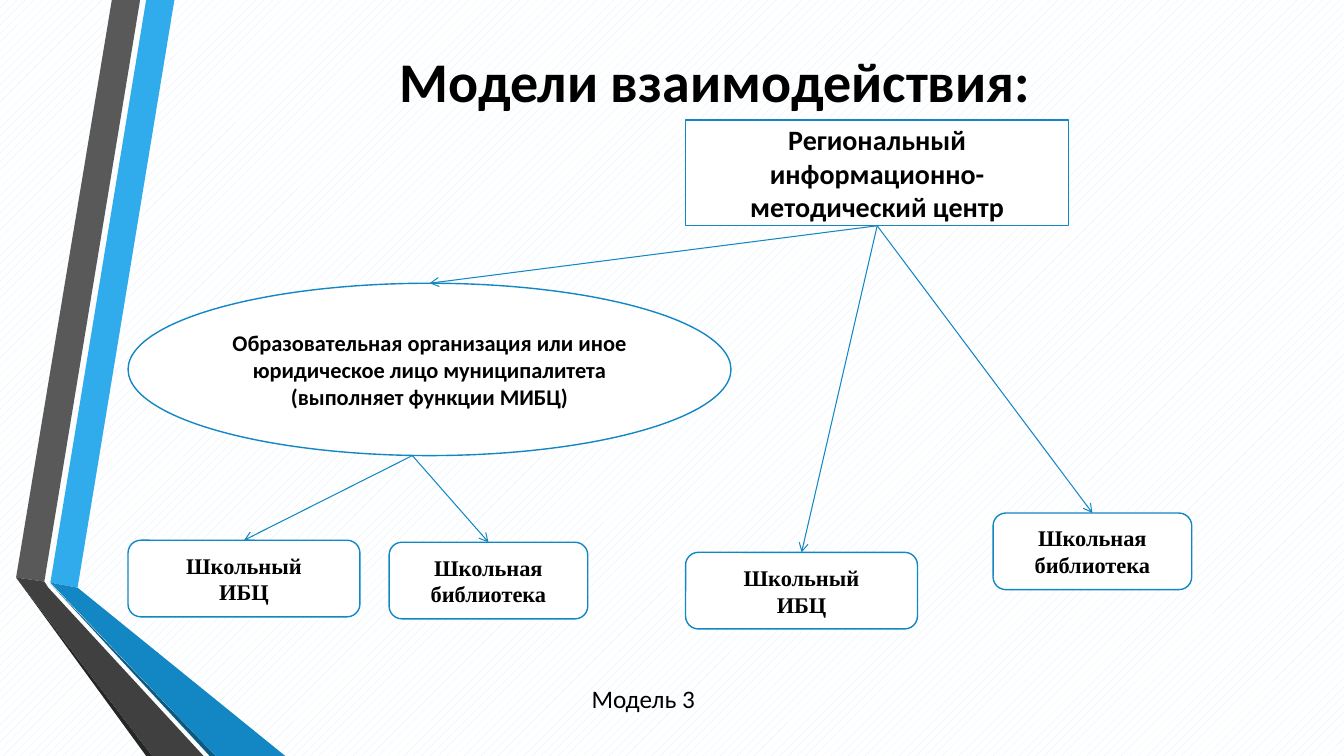
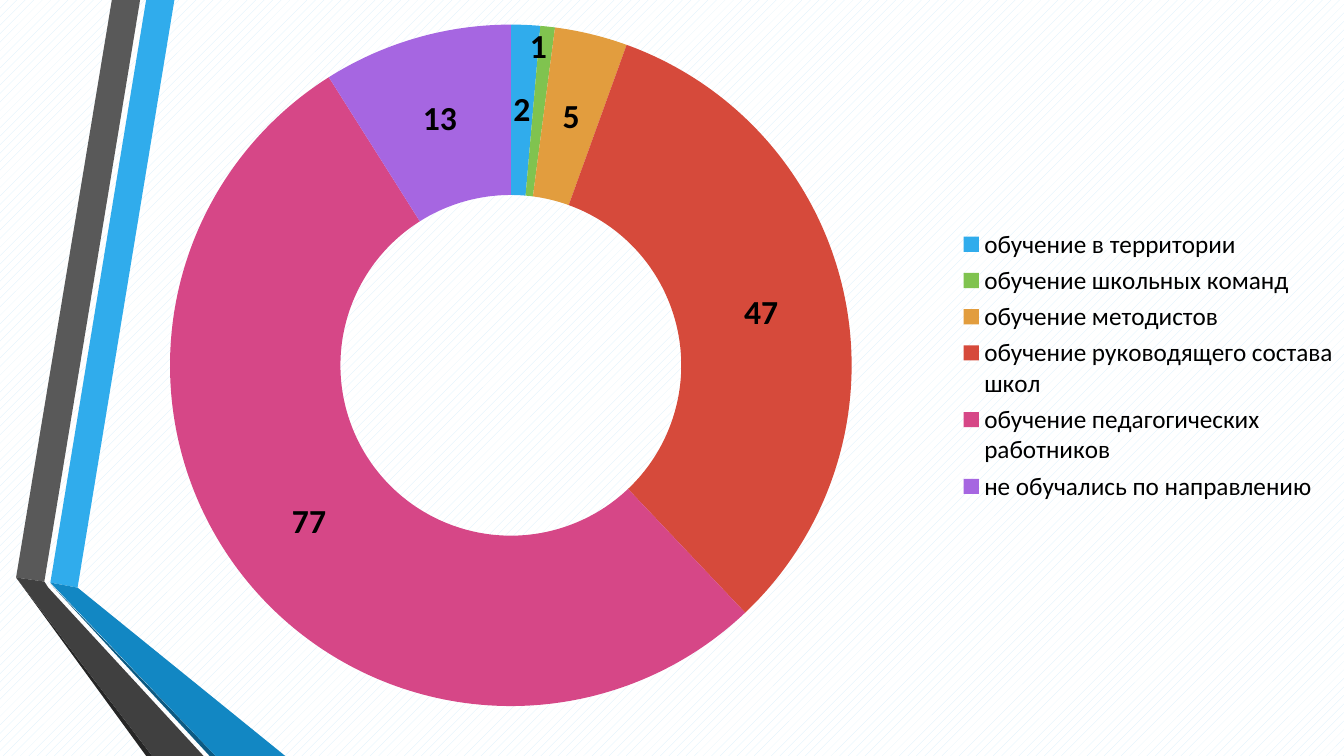
import dataclasses

import lxml.etree
import pptx
import pptx.chart.data
import pptx.dml.color
import pptx.enum.chart
import pptx.enum.dml
import pptx.enum.shapes
import pptx.enum.text
import pptx.oxml.ns
import pptx.util

Inches, Pt = pptx.util.Inches, pptx.util.Pt
SHAPE = pptx.enum.shapes.MSO_SHAPE
qn = pptx.oxml.ns.qn


def rgb(value):
    return pptx.dml.color.RGBColor.from_string(value)


@dataclasses.dataclass(frozen=True)
class Theme:
    text: str = "000000"
    paper: str = "FFFFFF"
    hatch: str = "D6EEFB"
    outline: str = "1287C3"
    slices: tuple = ("30ACEC", "80C34F", "E29D3E", "D64A3B", "D64787", "A666E1")
    font: str = "Calibri"
    serif: str = "Times New Roman"
    title_size: int = 40
    value_size: int = 24
    centre_size: int = 20
    caption_size: int = 18
    node_size: int = 16
    # Ribbon at the left edge: colour and outline points in inches
    ribbon: tuple = (
        ("30ACEC", ((0.5, 5.78), (0.77, 5.83), (1.73, 0), (1.45, 0))),
        ("595959", ((1.39, 0), (1.11, 0), (0.16, 5.73), (0.44, 5.77))),
        ("262626", ((0.16, 5.73), (1.45, 7.5), (1.51, 7.5))),
        ("0C5A82", ((0.5, 5.79), (2.08, 7.5), (2.14, 7.5))),
        ("1287C3", ((0.5, 5.78), (2.14, 7.5), (2.83, 7.5), (0.77, 5.83))),
        ("404040", ((2.02, 7.5), (0.48, 5.83), (0.44, 5.77), (0.16, 5.73),
                    (1.51, 7.5))),
    )


class Deck:
    def __init__(self, theme):
        self.theme = theme
        self.prs = pptx.Presentation()
        self.prs.slide_width, self.prs.slide_height = Inches(13.33), Inches(7.5)
        self.s = None
        # Background shared by all slides
        fill = self.prs.slide_master.background.fill
        fill.patterned()
        fill.pattern = pptx.enum.dml.MSO_PATTERN.PERCENT_20
        fill.fore_color.rgb = rgb(theme.hatch)
        fill.back_color.rgb = rgb(theme.paper)

    def slide(self, title=None):
        self.s = self.prs.slides.add_slide(self.prs.slide_layouts[5 if title else 6])
        for color, points in self.theme.ribbon:
            self.polygon(color, points)
        if title:
            sp = self.s.shapes.title
            sp.left, sp.top = Inches(1.61), Inches(0.02)
            sp.width, sp.height = Inches(10.96), Inches(1.54)
            self.set_text(sp.text_frame, title, self.theme.title_size, bold=True)

    def polygon(self, color, points):
        start, *rest = [(Inches(x), Inches(y)) for x, y in points]
        builder = self.s.shapes.build_freeform(*start)
        builder.add_line_segments(rest, close=True)
        sp = builder.convert_to_shape()
        sp.shadow.inherit = False
        sp.fill.solid()
        sp.fill.fore_color.rgb = rgb(color)
        sp.line.fill.background()

    def style(self, font, size, bold=False, name=None):
        font.name = name or self.theme.font
        font.size, font.bold = Pt(size), bold
        font.color.rgb = rgb(self.theme.text)

    def set_text(self, tf, text, size, bold=False, name=None,
                 anchor=pptx.enum.text.MSO_ANCHOR.MIDDLE):
        tf.text = text
        tf.word_wrap = True
        tf.vertical_anchor = anchor
        for p in tf.paragraphs:
            p.alignment = pptx.enum.text.PP_ALIGN.CENTER
            self.style(p.font, size, bold, name)

    def node(self, kind, box, text, size, name=None):
        sp = self.s.shapes.add_shape(kind, *map(Inches, box))
        sp.shadow.inherit = False
        sp.fill.solid()
        sp.fill.fore_color.rgb = rgb(self.theme.paper)
        sp.line.color.rgb = rgb(self.theme.outline)
        sp.line.width = Pt(1)
        self.set_text(sp.text_frame, text, size, True, name)
        return sp

    def arrow(self, start, end):
        line = self.s.shapes.add_connector(
            pptx.enum.shapes.MSO_CONNECTOR.STRAIGHT, *start, *end)
        line.line.color.rgb = rgb(self.theme.outline)
        line.line.width = Pt(0.75)
        ln = line.element.spPr.find(qn("a:ln"))
        lxml.etree.SubElement(ln, qn("a:tailEnd"), type="arrow")
        lxml.etree.SubElement(line.element.spPr, qn("a:effectLst"))

    def caption(self, box, text):
        tf = self.s.shapes.add_textbox(*map(Inches, box)).text_frame
        self.set_text(tf, text, self.theme.caption_size,
                      anchor=pptx.enum.text.MSO_ANCHOR.TOP)

    def doughnut(self, box, values):
        data = pptx.chart.data.CategoryChartData()
        data.categories = list(values)
        data.add_series("Series 1", list(values.values()))
        chart = self.s.shapes.add_chart(
            pptx.enum.chart.XL_CHART_TYPE.DOUGHNUT, *map(Inches, box), data).chart
        chart.has_title = False
        self.style(chart.font, self.theme.caption_size)
        # Legend
        chart.has_legend = True
        chart.legend.position = pptx.enum.chart.XL_LEGEND_POSITION.RIGHT
        chart.legend.include_in_layout = False
        # Slices and values
        plot = chart.plots[0]
        plot.vary_by_categories = True
        series = plot.series[0]
        for i, color in enumerate(self.theme.slices):
            fill = series.points[i].format.fill
            fill.solid()
            fill.fore_color.rgb = rgb(color)
        series.data_labels.show_value = True
        self.style(series.data_labels.font, self.theme.value_size, True)
        # The narrow slice has its value moved to the rim
        self.style(series.points[1].data_label.font, self.theme.value_size, True)
        # Manual places, as fractions of the chart
        root = chart.element
        self.place(root.find(".//" + qn("c:dLbl")), 1, x=0, y=-0.09)
        self.place(root.find(".//" + qn("c:plotArea")), 0, layoutTarget="inner",
                   xMode="edge", yMode="edge", x=0.07, y=0.02, w=0.54, h=0.96)
        self.place(root.find(".//" + qn("c:legend")), 1,
                   xMode="edge", yMode="edge", x=0.69, y=0.3, w=0.31, h=0.4)

    def place(self, parent, index, **settings):
        for old in parent.findall(qn("c:layout")):
            parent.remove(old)
        layout = lxml.etree.Element(qn("c:layout"))
        manual = lxml.etree.SubElement(layout, qn("c:manualLayout"))
        for tag, value in settings.items():
            lxml.etree.SubElement(manual, qn("c:" + tag), val=str(value))
        parent.insert(index, layout)


def top(sp):
    return sp.left + sp.width // 2, sp.top


def bottom(sp):
    return sp.left + sp.width // 2, sp.top + sp.height


def main():
    theme = Theme()
    deck = Deck(theme)

    # Interaction model
    deck.slide("Модели взаимодействия:")
    centre = deck.node(SHAPE.RECTANGLE, (6.8, 1.19, 3.8, 1.05),
                       "Региональный информационно-методический центр",
                       theme.centre_size)
    municipal = deck.node(
        SHAPE.OVAL, (1.27, 2.81, 5.98, 1.71),
        "Образовательная организация или иное юридическое лицо муниципалитета\n"
        "(выполняет функции МИБЦ)", theme.node_size)
    fork = (Inches(4.09), bottom(municipal)[1])
    deck.arrow(bottom(centre), top(municipal))
    school, library = ("Школьный\nИБЦ", 2.3), ("Школьная\nбиблиотека", 1.97)
    for (text, width), left, y, start in (
            (school, 1.27, 5.36, fork),
            (library, 3.86, 5.38, fork),
            (school, 6.8, 5.48, bottom(centre)),
            (library, 9.85, 5.09, bottom(centre))):
        unit = deck.node(SHAPE.ROUNDED_RECTANGLE, (left, y, width, 0.76),
                         text, theme.node_size, theme.serif)
        deck.arrow(start, top(unit))
    deck.caption((3.83, 6.73, 5.1, 0.4), "Модель 3")

    # Training figures
    deck.slide()
    deck.doughnut((0.81, 0.1, 12.52, 7.05), {
        "обучение в территории": 2,
        "обучение школьных команд": 1,
        "обучение методистов": 5,
        "обучение руководящего состава школ": 47,
        "обучение педагогических работников": 77,
        "не обучались по направлению": 13,
    })

    deck.prs.save("out.pptx")


if __name__ == "__main__":
    main()
